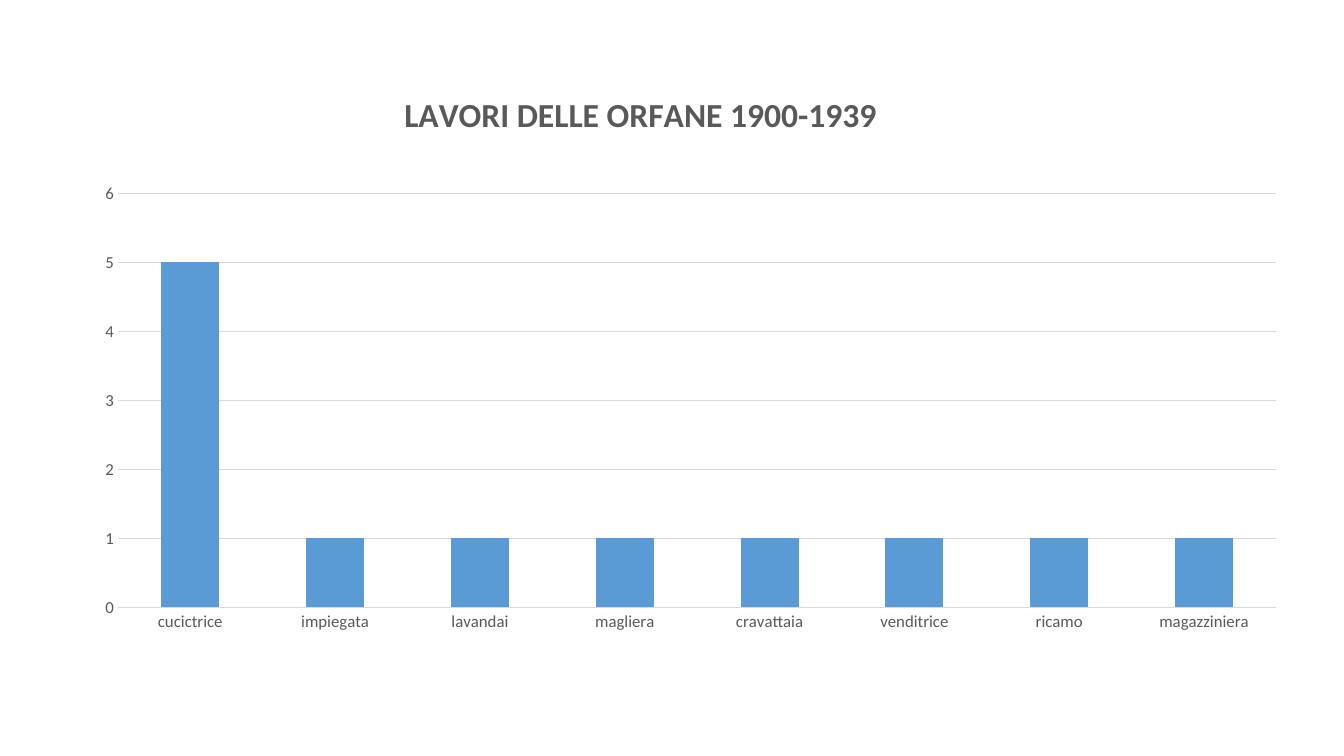
from lxml.etree import SubElement as sub
from pptx import Presentation
from pptx.chart.data import CategoryChartData as ChartData
from pptx.dml.color import RGBColor
from pptx.enum.chart import XL_CHART_TYPE as Kind, XL_TICK_MARK as Tick
from pptx.oxml import parse_xml
from pptx.oxml.ns import qn, nsdecls
from pptx.util import Pt

FONT = "Calibri"
GREY, GRID, BLUE = "595959", "D9D9D9", "5B9BD5"
JOBS = {"cucictrice": 5, "impiegata": 1, "lavandai": 1, "magliera": 1,
        "cravattaia": 1, "venditrice": 1, "ricamo": 1, "magazziniera": 1}


def tint(color, code):
    color.rgb = RGBColor.from_string(code)


def style(font, size, bold=False):
    font.name, font.size, font.bold = FONT, Pt(size), bold
    tint(font.color, GREY)


def place(part, index, **marks):
    """Fix a chart part at fractions of the chart area."""
    for old in part.findall(qn("c:layout")):
        part.remove(old)
    layout = parse_xml(f"<c:layout {nsdecls('c')}/>")
    part.insert(index, layout)
    manual = sub(layout, qn("c:manualLayout"))
    for name, value in marks.items():
        sub(manual, qn("c:" + name)).set("val", str(value))


def add_jobs(slide, left, top, width, height):
    data = ChartData()
    data.categories = list(JOBS)
    data.add_series("Series 1", list(JOBS.values()))
    chart = slide.shapes.add_chart(
        Kind.COLUMN_CLUSTERED, Pt(left), Pt(top), Pt(width), Pt(height), data).chart
    chart.has_legend = False
    style(chart.font, 12)

    # Title
    chart.has_title = True
    frame = chart.chart_title.text_frame
    frame.text = "LAVORI DELLE ORFANE 1900-1939"
    style(frame.paragraphs[0].runs[0].font, 24, True)
    place(chart.chart_title._element, 1, xMode="edge", yMode="edge", x=0.32, y=0.03)

    # Columns
    plot = chart.plots[0]
    plot.gap_width = 150
    plot.vary_by_categories = False
    fill = plot.series[0].format.fill
    fill.solid()
    tint(fill.fore_color, BLUE)
    place(chart._chartSpace.chart.plotArea, 0, layoutTarget="inner",
          xMode="edge", yMode="edge", x=0.103, y=0.185, w=0.897, h=0.6)

    # Axes and grid
    for axis in (chart.category_axis, chart.value_axis):
        axis.major_tick_mark = axis.minor_tick_mark = Tick.NONE
        axis.format.line.fill.background()
        style(axis.tick_labels.font, 12)
    scale = chart.value_axis
    scale.minimum_scale, scale.maximum_scale, scale.major_unit = 0, 6, 1
    line = scale.major_gridlines.format.line
    line.width = Pt(0.75)
    tint(line.color, GRID)


def main():
    deck = Presentation()
    deck.slide_width, deck.slide_height = Pt(960), Pt(540)
    slide = deck.slides.add_slide(deck.slide_layouts[6])
    add_jobs(slide, -10.8, 46.8, 923, 493.2)
    deck.save("out.pptx")


if __name__ == "__main__":
    main()
